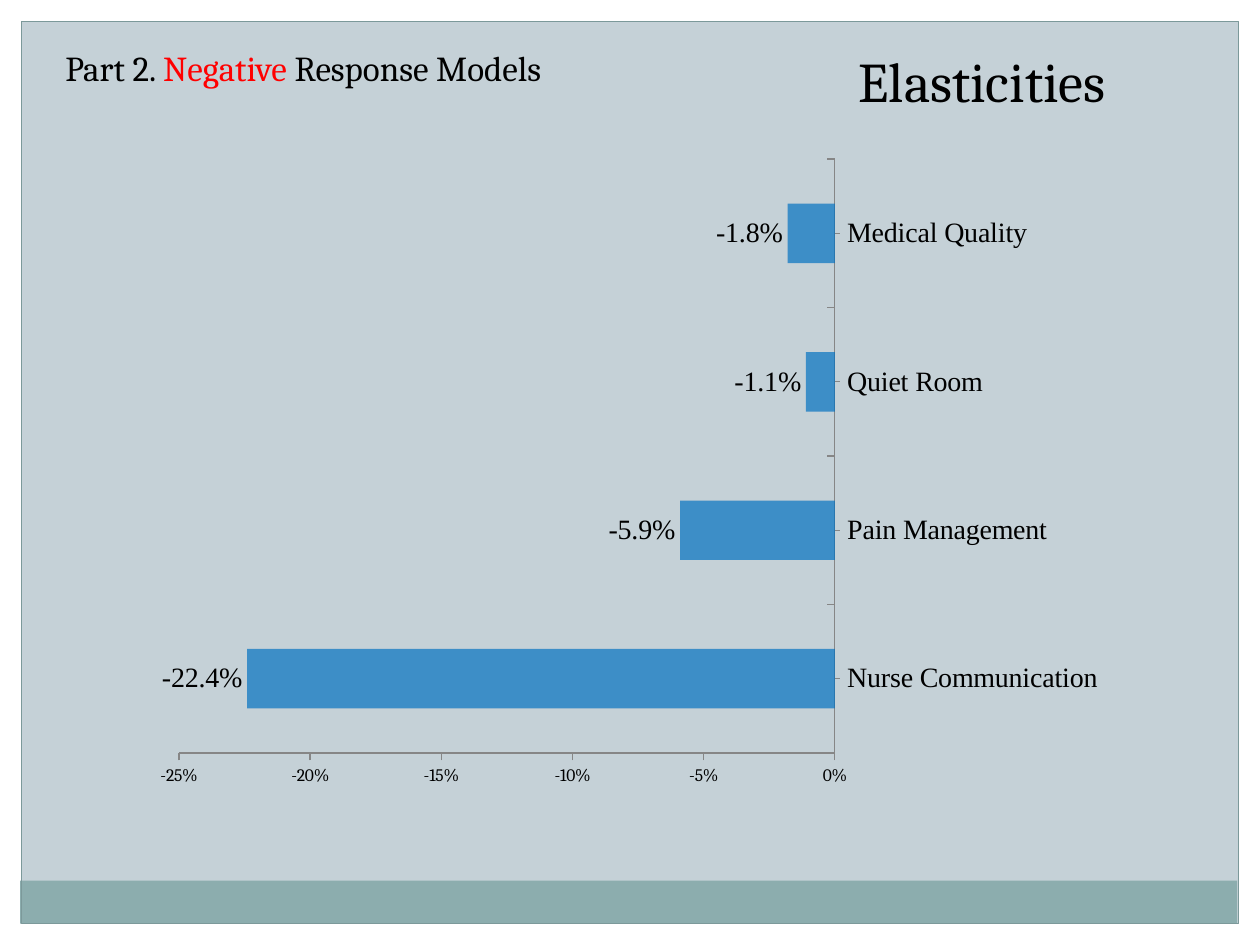
from lxml import etree
from pptx import Presentation
from pptx.chart.data import CategoryChartData
from pptx.dml.color import RGBColor
from pptx.enum.chart import XL_CHART_TYPE as Kind, XL_LABEL_POSITION as Spot
from pptx.enum.chart import XL_TICK_LABEL_POSITION as Side, XL_TICK_MARK as Tick
from pptx.enum.shapes import MSO_SHAPE as Form
from pptx.enum.text import MSO_ANCHOR as Anchor, PP_ALIGN as Align
from pptx.oxml import parse_xml
from pptx.oxml.ns import nsdecls, qn
from pptx.util import Inches, Pt

COLORS = {"back": "C5D1D7", "edge": "FFFFFF", "band": "8CADAE", "frame": "7C999A",
          "text": "000000", "red": "FF0000", "bar": "0070C0", "axis": "868686"}
HEAD, BODY = "Cambria", "Times New Roman"
DATA = {"Nurse Communication": -0.224, "Pain Management": -0.059,
        "Quiet Room": -0.011, "Medical Quality": -0.018}


def rgb(name):
    return RGBColor.from_string(COLORS[name])


def style(font, face, size, color="text"):
    font.name, font.size, font.bold = face, Pt(size), False
    font.color.rgb = rgb(color)


def add_rect(slide, box, fill=None, line=None):
    rect = slide.shapes.add_shape(Form.RECTANGLE, *map(Inches, box))
    rect.shadow.inherit = False
    if fill:
        rect.fill.solid()
        rect.fill.fore_color.rgb = rgb(fill)
    else:
        rect.fill.background()
    if line:
        rect.line.color.rgb = rgb(line)
        rect.line.width = Pt(0.75)
    else:
        rect.line.fill.background()


def add_border(slide):
    edge = 0.17
    for box in ((0, 7.5 - edge, 10, edge), (0, 0, 10, edge),
                (10 - edge, 0, edge, 7.5), (0, 0, edge, 7.5)):
        add_rect(slide, box, "edge")
    add_rect(slide, (0.16, 6.99, 9.66, 0.34), "band")
    add_rect(slide, (edge, edge, 9.66, 7.16), line="frame")


def set_title(slide, text):
    title = slide.shapes.title
    title.left, title.top = Inches(4.42), Inches(0.32)
    title.width, title.height = Inches(6.75), Inches(0.64)
    frame = title.text_frame
    frame.text = text
    frame.vertical_anchor = Anchor.TOP
    para = frame.paragraphs[0]
    para.alignment = Align.CENTER
    style(para.runs[0].font, HEAD, 32)


def add_part(slide, parts):
    box = slide.shapes.add_textbox(Inches(0.42), Inches(0.32), Inches(4.83), Inches(0.44))
    box.text_frame.word_wrap = True
    para = box.text_frame.paragraphs[0]
    for text, color in parts:
        run = para.add_run()
        run.text = text
        style(run.font, HEAD, 20, color)


def set_layout(chart, **shares):
    """Fix the inner plot area as shares of the chart's size."""
    plot = chart._chartSpace.chart.plotArea
    for old in plot.findall(qn("c:layout")):
        plot.remove(old)
    marks = {"layoutTarget": "inner", "xMode": "edge", "yMode": "edge", **shares}
    inner = "".join(f'<c:{tag} val="{val}"/>' for tag, val in marks.items())
    plot.insert(0, parse_xml(f'<c:layout {nsdecls("c")}><c:manualLayout>{inner}'
                             '</c:manualLayout></c:layout>'))


def set_axis(axis, face, size):
    axis.has_major_gridlines = False
    axis.major_tick_mark = Tick.OUTSIDE
    axis.format.line.color.rgb = rgb("axis")
    axis.format.line.width = Pt(0.75)
    style(axis.tick_labels.font, face, size)


def add_bars(slide):
    data = CategoryChartData(number_format="0.0%")
    data.categories = list(DATA)
    data.add_series("Series 1", list(DATA.values()))
    box = map(Inches, (1.11, 1.16, 7.77, 5.18))
    chart = slide.shapes.add_chart(Kind.BAR_CLUSTERED, *box, data).chart
    chart.has_legend = chart.has_title = False
    style(chart.font, HEAD, 10)
    set_layout(chart, x=0.04, y=0.02, w=0.67, h=0.91)

    cats, vals = chart.category_axis, chart.value_axis
    set_axis(cats, BODY, 16)
    cats.minor_tick_mark = Tick.INSIDE
    cats.tick_label_position = Side.HIGH
    set_axis(vals, HEAD, 10)
    vals.minimum_scale, vals.maximum_scale, vals.major_unit = -0.25, 0, 0.05
    vals.tick_labels.number_format = "0%"
    vals.tick_labels.number_format_is_linked = False

    plot = chart.plots[0]
    plot.gap_width, plot.vary_by_categories = 150, False
    bars = plot.series[0]
    bars.invert_if_negative = False
    bars.format.fill.solid()
    bars.format.fill.fore_color.rgb = rgb("bar")
    tint = bars._element.find(".//" + qn("a:srgbClr"))
    etree.SubElement(tint, qn("a:alpha")).set("val", "69000")

    plot.has_data_labels = True
    labels = plot.data_labels
    labels.show_value = True
    labels.position = Spot.OUTSIDE_END
    labels.number_format, labels.number_format_is_linked = "0.0%", False
    style(labels.font, BODY, 16)


def main():
    deck = Presentation()
    deck.slide_width, deck.slide_height = Inches(10), Inches(7.5)
    slide = deck.slides.add_slide(deck.slide_layouts[5])
    slide.background.fill.solid()
    slide.background.fill.fore_color.rgb = rgb("back")
    add_border(slide)
    set_title(slide, "Elasticities")
    add_part(slide, (("Part 2. ", "text"), ("Negative", "red"),
                     (" Response Models", "text")))
    add_bars(slide)
    deck.save("out.pptx")


if __name__ == "__main__":
    main()
